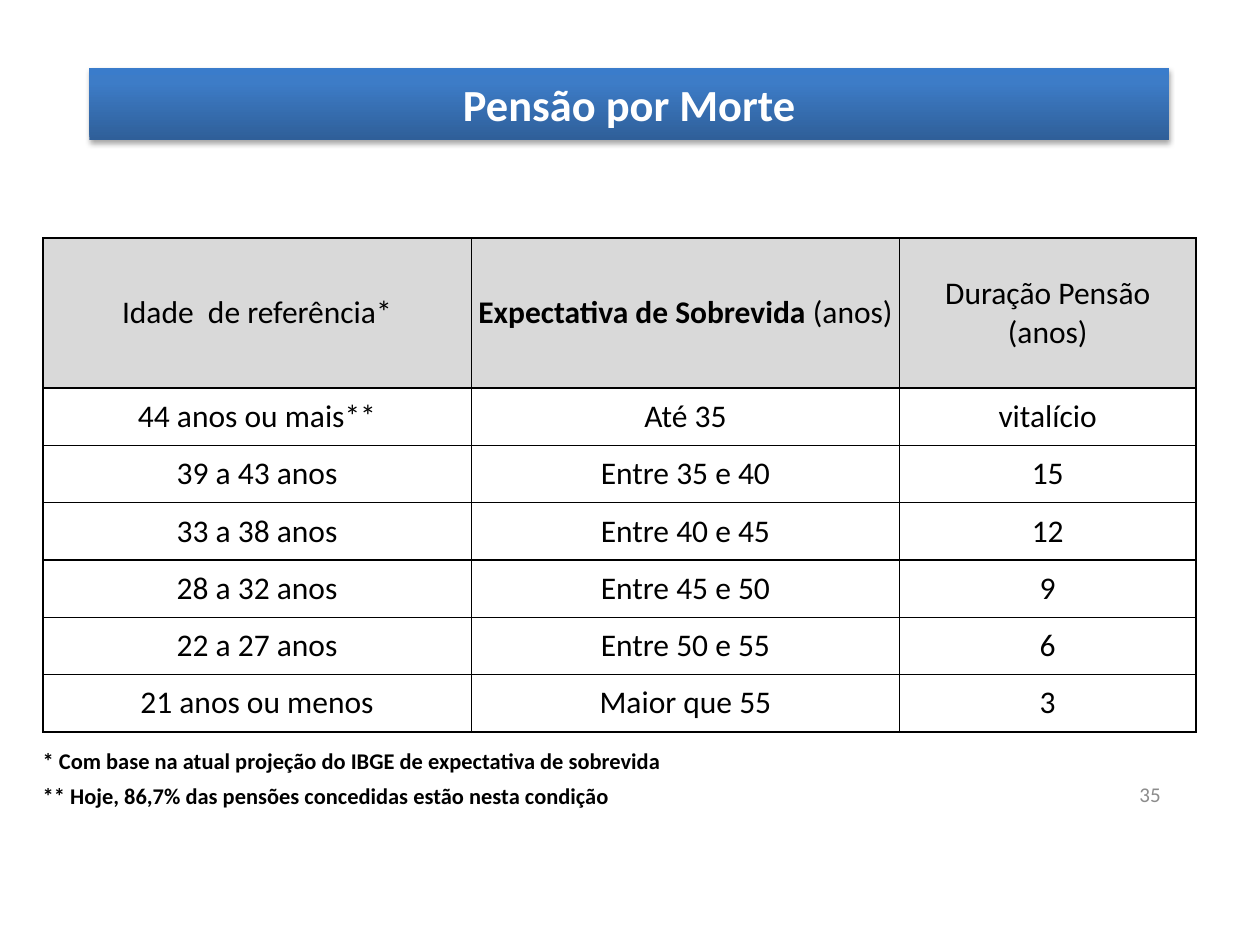
from lxml import etree
from pptx import Presentation
from pptx.dml.color import RGBColor
from pptx.enum.text import MSO_ANCHOR, MSO_AUTO_SIZE, PP_ALIGN
from pptx.oxml import parse_xml
from pptx.oxml.ns import nsdecls, qn
from pptx.util import Inches, Pt

LEFT, CENTER, RIGHT = PP_ALIGN.LEFT, PP_ALIGN.CENTER, PP_ALIGN.RIGHT
MIDDLE, TOP = MSO_ANCHOR.MIDDLE, MSO_ANCHOR.TOP
THEME = {
    "font": "Calibri", "text": "000000", "title": "FFFFFF", "number": "8C8C8C",
    "header": "D9D9D9", "border": "000000", "shadow": "000000",
    "banner": [(0, "2F5F99"), (80, "3D7CC7"), (100, "3A7CCB")],
    "title_size": 25.4, "table_size": 18, "note_size": 12.8, "number_size": 12,
}


def add_run(para, text, size, color, bold=False):
    span = para.add_run()
    span.text = text
    span.font.name = THEME["font"]
    span.font.size = Pt(size)
    span.font.bold = bold
    span.font.color.rgb = RGBColor.from_string(color)


def add_box(slide, left, top, width, height, anchor):
    box = slide.shapes.add_textbox(Inches(left), Inches(top), Inches(width), Inches(height))
    box.text_frame.word_wrap = True
    box.text_frame.vertical_anchor = anchor
    return box.text_frame


deck = Presentation()
deck.slide_width, deck.slide_height = Inches(10), Inches(7.5)
page = deck.slides.add_slide(deck.slide_layouts[5])

# Title banner
banner = page.shapes.title
banner.left, banner.top = Inches(0.71), Inches(0.54)
banner.width, banner.height = Inches(8.57), Inches(0.57)
stops = "".join(
    f'<a:gs pos="{share * 1000}"><a:srgbClr val="{color}"/></a:gs>'
    for share, color in THEME["banner"]
)
properties = banner.element.spPr
properties.append(parse_xml(
    f'<a:prstGeom {nsdecls("a")} prst="rect"><a:avLst/></a:prstGeom>'))
properties.append(parse_xml(
    f'<a:gradFill {nsdecls("a")} rotWithShape="1"><a:gsLst>{stops}</a:gsLst>'
    f'<a:lin ang="{270 * 60000}" scaled="0"/></a:gradFill>'))
properties.append(parse_xml(
    f'<a:effectLst {nsdecls("a")}><a:outerShdw blurRad="{Pt(3.1)}" dist="{Pt(1.8)}" '
    f'dir="{90 * 60000}" rotWithShape="0"><a:srgbClr val="{THEME["shadow"]}">'
    '<a:alpha val="35000"/></a:srgbClr></a:outerShdw></a:effectLst>'))
frame = banner.text_frame
frame.auto_size = MSO_AUTO_SIZE.NONE
frame.word_wrap = False
frame.vertical_anchor = MIDDLE
frame.margin_left = frame.margin_right = frame.margin_top = frame.margin_bottom = 0
frame.paragraphs[0].alignment = CENTER
add_run(frame.paragraphs[0], "Pensão por Morte", THEME["title_size"], THEME["title"], True)

# Pension table: each cell is a list of (text, bold) runs
header = [
    [("Idade  de referência*", False)],
    [("Expectativa de Sobrevida", True), (" (anos)", False)],
    [("Duração Pensão (anos)", False)],
]
body = [
    ("44 anos ou mais**", "Até 35", "vitalício"),
    ("39 a 43 anos", "Entre 35 e 40", "15"),
    ("33 a 38 anos", "Entre 40 e 45", "12"),
    ("28 a 32 anos", "Entre 45 e 50", "9"),
    ("22 a 27 anos", "Entre 50 e 55", "6"),
    ("21 anos ou menos", "Maior que 55", "3"),
]
rows = [header] + [[[(text, False)] for text in line] for line in body]
column_widths = [3.4, 3.4, 2.35]
row_heights = [1.19] + [0.455] * len(body)
table = page.shapes.add_table(
    len(rows), len(column_widths), Inches(0.34), Inches(1.89),
    Inches(sum(column_widths)), Inches(sum(row_heights))).table
table.horz_banding = False
for column, width in zip(table.columns, column_widths):
    column.width = Inches(width)
for row, height in zip(table.rows, row_heights):
    row.height = Inches(height)

for row_index, line in enumerate(rows):
    for column_index, runs in enumerate(line):
        cell = table.cell(row_index, column_index)
        cell.vertical_anchor = MIDDLE
        cell.margin_left = cell.margin_right = Inches(0.05)
        cell.margin_top = cell.margin_bottom = Inches(0.04)
        para = cell.text_frame.paragraphs[0]
        para.alignment = CENTER
        for text, bold in runs:
            add_run(para, text, THEME["table_size"], THEME["text"], bold)
        cell_properties = cell._tc.get_or_add_tcPr()
        for side in ("a:lnL", "a:lnR", "a:lnT", "a:lnB"):
            edge = etree.SubElement(cell_properties, qn(side), w=str(Pt(1)))
            fill = etree.SubElement(edge, qn("a:solidFill"))
            etree.SubElement(fill, qn("a:srgbClr"), val=THEME["border"])
        if row_index == 0:
            cell.fill.solid()
            cell.fill.fore_color.rgb = RGBColor.from_string(THEME["header"])
        else:
            cell.fill.background()

# Footnotes
notes = [
    "* Com base na atual projeção do IBGE de expectativa de sobrevida",
    "** Hoje, 86,7% das pensões concedidas estão nesta condição",
]
frame = add_box(page, 0.24, 5.88, 7.95, 0.59, TOP)
for index, note in enumerate(notes):
    para = frame.add_paragraph() if index else frame.paragraphs[0]
    para.alignment = LEFT
    para.space_before = para.space_after = Pt(2.2)
    add_run(para, note, THEME["note_size"], THEME["text"], True)

# Page number
para = add_box(page, 7.06, 6.15, 2.25, 0.3, MIDDLE).paragraphs[0]
para.alignment = RIGHT
add_run(para, "35", THEME["number_size"], THEME["number"])

deck.save("out.pptx")
